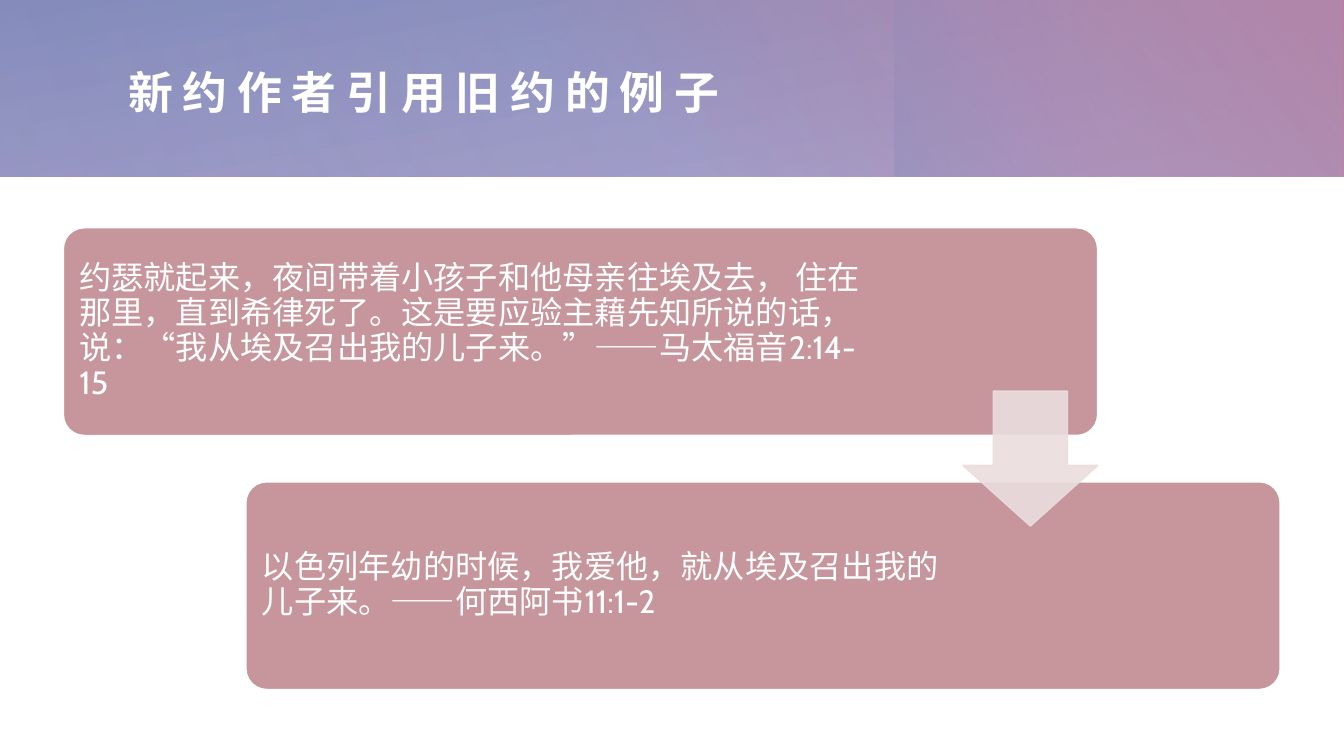
"""Build a slide showing a New Testament author quoting the Old Testament."""
from dataclasses import dataclass

from lxml import etree
from pptx import Presentation
from pptx import util as u
from pptx.dml.color import RGBColor
from pptx.enum import shapes, text
from pptx.oxml.ns import qn


@dataclass(frozen=True)
class Theme:
    """Colours, font and type sizes of the slide."""
    white: str = "FFFFFF"
    rose: str = "C6969C"
    blush: str = "EADDDE"
    lavender: str = "A096C6"
    blue: str = "7F8BBA"
    pink: str = "BA7F9F"
    violet: str = "A47FBA"
    font: str = "Cabin"
    title_size: int = 32
    body_size: int = 23
    tracking: int = 7


THEME = Theme()
WIDTH, HEIGHT = u.Inches(13.33), u.Inches(7.5)
BAND = 23.33
CARD_LEFT, CARD_TOP, CARD_WIDTH, CARD_HEIGHT = 4.72, 30.13, 76.95, 27.47
STEP_RIGHT, STEP_DOWN = 13.58, 33.6
PAD_X, PAD_Y = 0.45, 0.8

BANDS = [
    ((0, 0, 100, BAND), 0, 260, [(0, THEME.lavender, 83), (100, THEME.blue, 100)]),
    ((36.1, 0, 63.9, BAND), 0, 310, [(22, THEME.pink, 0), (99, THEME.pink, 100)]),
    ((74.04, -13.2, 13.13, 49.87), 270, 250, [(45, THEME.violet, 0), (99, THEME.blue, 33)]),
    ((20.1, 0, 79.82, BAND), 180, 330, [(0, THEME.lavender, 30), (99, THEME.lavender, 0)]),
    ((0, 0, 64.9, BAND), 0, 340, [(0, THEME.lavender, 21), (99, THEME.lavender, 0)]),
]
QUOTES = [
    ("约瑟就起来，夜间带着小孩子和他母亲往埃及去， 住在那里，直到希律死了。"
     "这是要应验主藉先知所说的话，说：“我从埃及召出我的儿子来。”——马太福音2:14-15", 60.99),
    ("以色列年幼的时候，我爱他，就从埃及召出我的儿子来。——何西阿书11:1-2", 52.44),
]


def place(left, top, width, height):
    """Turn percentages of the slide into lengths."""
    return (round(WIDTH * left / 100), round(HEIGHT * top / 100),
            round(WIDTH * width / 100), round(HEIGHT * height / 100))


def set_opacity(shape, percents):
    """Give the shape's colours, in order, their opacity."""
    for colour, percent in zip(shape._element.iter(qn("a:srgbClr")), percents):
        etree.SubElement(colour, qn("a:alpha"), val=str(percent * 1000))


def add_band(page, area, rotation, angle, stops):
    """Add one translucent gradient layer of the header."""
    band = page.shapes.add_shape(shapes.MSO_SHAPE.RECTANGLE, *place(*area))
    band.shadow.inherit = False
    band.rotation = rotation
    band.line.fill.background()
    band.fill.gradient()
    band.fill.gradient_angle = 360 - angle
    for stop, (position, colour, _) in zip(band.fill.gradient_stops, stops):
        stop.position = position / 100
        stop.color.rgb = RGBColor.from_string(colour)
    set_opacity(band, [opacity for _, _, opacity in stops])


def add_solid(page, kind, area, adjustments, fill, line):
    """Add a plain filled shape with a thin outline."""
    shape = page.shapes.add_shape(kind, *place(*area))
    shape.shadow.inherit = False
    for index, value in enumerate(adjustments):
        shape.adjustments[index] = value
    shape.fill.solid()
    shape.fill.fore_color.rgb = RGBColor.from_string(fill)
    shape.line.color.rgb = RGBColor.from_string(line)
    shape.line.width = u.Pt(1)
    return shape


def write(box, words, size, inset, bold=False):
    """Write one left-aligned run, centred vertically, and return it."""
    frame = box.text_frame
    frame.word_wrap = True
    frame.auto_size = text.MSO_AUTO_SIZE.NONE
    frame.vertical_anchor = text.MSO_ANCHOR.MIDDLE
    frame.margin_left = frame.margin_right = u.Inches(inset)
    frame.margin_top = frame.margin_bottom = u.Inches(inset)
    para = frame.paragraphs[0]
    para.alignment = text.PP_ALIGN.LEFT
    para.line_spacing = 0.9
    span = para.add_run()
    span.text = words
    span.font.name = THEME.font
    span.font.size = u.Pt(size)
    span.font.bold = bold
    span.font.color.rgb = RGBColor.from_string(THEME.white)
    return span


def add_title(page, words):
    """Place the title over the header in widely spaced letters."""
    title = page.shapes.title
    title.left, title.top, title.width, title.height = place(9.53, 5.47, 85.15, 14.13)
    span = write(title, words, THEME.title_size, 0, bold=True)
    span.font._element.set("spc", str(THEME.tracking * 100))
    tree = page.shapes._spTree
    tree.remove(title._element)
    tree.append(title._element)


def add_card(page, index, words, text_width):
    """Add a quotation card, stepped right and down by its index."""
    left, top = CARD_LEFT + index * STEP_RIGHT, CARD_TOP + index * STEP_DOWN
    add_solid(page, shapes.MSO_SHAPE.ROUNDED_RECTANGLE,
              (left, top, CARD_WIDTH, CARD_HEIGHT), [0.1], THEME.rose, THEME.white)
    box = page.shapes.add_textbox(
        *place(left + PAD_X, top + PAD_Y, text_width, CARD_HEIGHT - 2 * PAD_Y))
    write(box, words, THEME.body_size, 0.1)


def main():
    """Build and save the deck."""
    deck = Presentation()
    deck.slide_width, deck.slide_height = WIDTH, HEIGHT
    page = deck.slides.add_slide(deck.slide_layouts[5])
    for band in BANDS:
        add_band(page, *band)
    add_title(page, "新约作者引用旧约的例子")
    for index, quote in enumerate(QUOTES):
        add_card(page, index, *quote)
    arrow = add_solid(page, shapes.MSO_SHAPE.DOWN_ARROW, (71.64, 51.73, 10.05, 17.87),
                      [0.55, 0.45], THEME.blush, THEME.blush)
    # python-pptx orders a down arrow's adjustments as head length, then shaft width
    arrow.adjustments[0], arrow.adjustments[1] = 0.55, 0.45
    set_opacity(arrow, [90, 90])
    deck.save("out.pptx")


if __name__ == "__main__":
    main()
